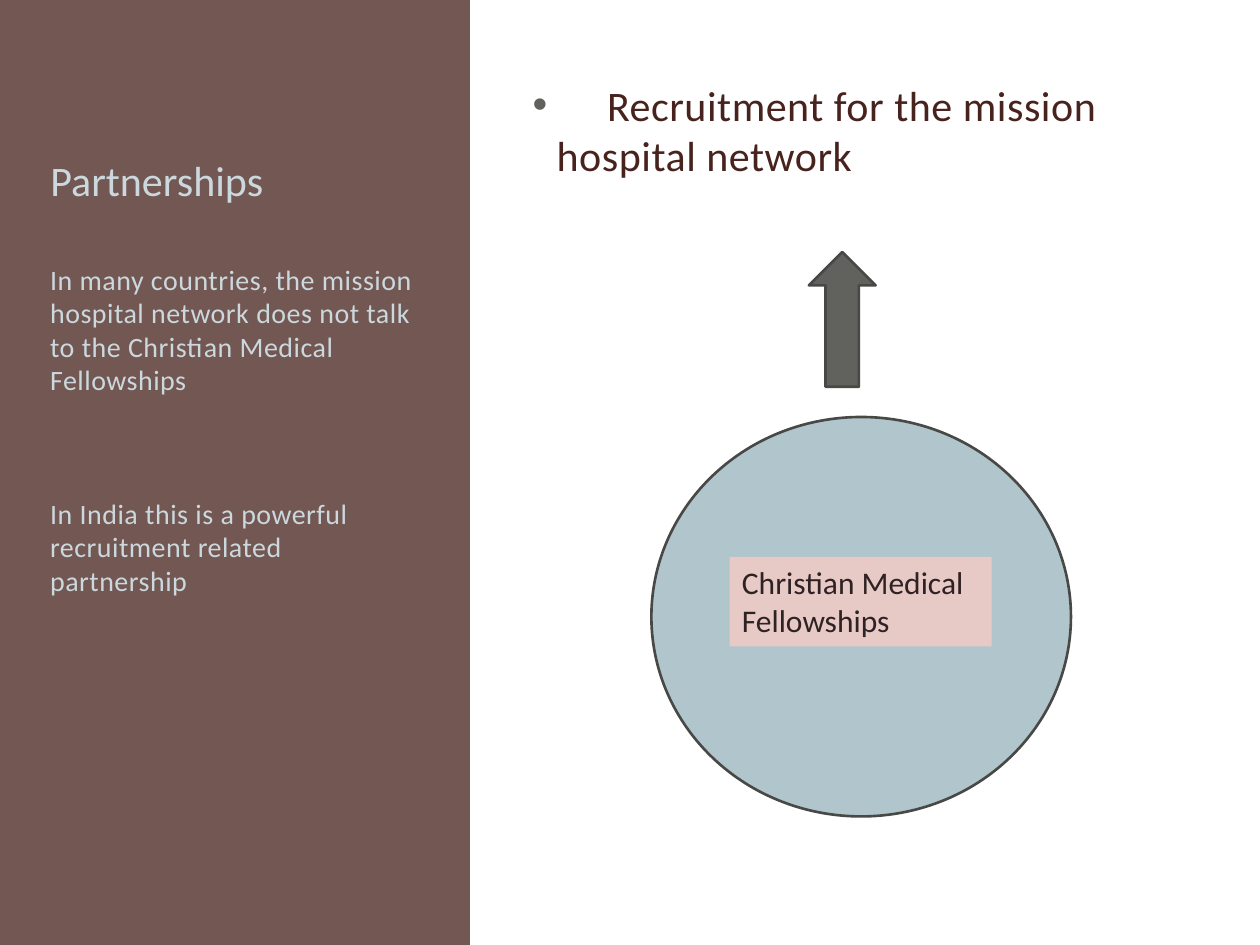
from dataclasses import dataclass
from lxml import etree
from pptx import Presentation, util as u
from pptx.dml.color import RGBColor
from pptx.enum import shapes, text
from pptx.oxml.ns import qn


@dataclass(frozen=True)
class Theme:
    face: str = "Calibri"
    brown: str = "48231E"
    pale: str = "CBD8DD"
    gray: str = "61625E"
    edge: str = "484946"
    blue: str = "B1C5CC"
    pink: str = "E7C9C5"
    ink: str = "2E2224"
    head: int = 24
    tag: int = 18
    note: int = 16


T = Theme()
KIND = shapes.MSO_SHAPE


def inner(box, left, top, wide, high):
    x, y, w, h = box
    return x + left * w, y + top * h, wide * w, high * h


def place(box):
    return [u.Inches(round(v, 2)) for v in box]


def sub(node, tag, **attrs):
    return etree.SubElement(node, qn(tag), attrs)


def style(para, size, color, track=None):
    font = para.font
    font.name, font.size = T.face, u.Pt(size)
    font.color.rgb = RGBColor.from_string(color)
    para.alignment = text.PP_ALIGN.LEFT
    if track:
        para._p.pPr.find(qn("a:defRPr")).set("spc", str(track))


def draw(slide, kind, box, fill, line=None):
    shape = slide.shapes.add_shape(kind, *place(box))
    shape.shadow.inherit = False
    shape.fill.solid()
    shape.fill.fore_color.rgb = RGBColor.from_string(fill)
    if line:
        shape.line.color.rgb = RGBColor.from_string(line)
        shape.line.width = u.Pt(1.5)
    else:
        shape.line.fill.background()
    return shape


def write(slide, box):
    frame = slide.shapes.add_textbox(*place(box)).text_frame
    frame.word_wrap = True
    return frame


def side(slide, box):
    panel = draw(slide, KIND.RECTANGLE, box, T.brown)
    color = panel.fill._xPr.find(qn("a:solidFill"))[0]
    sub(color, "a:alpha", val="76000")

    title = slide.shapes.title
    panel._element.addnext(title._element)
    title.left, title.top, title.width, title.height = place(
        inner(box, 0.08, 0.033, 0.83, 0.19))
    frame = title.text_frame
    frame.text = "Partnerships"
    frame.vertical_anchor = text.MSO_ANCHOR.BOTTOM
    style(frame.paragraphs[0], T.head, T.pale)

    notes = (
        "In many countries, the mission hospital network does not talk "
        "to the Christian Medical Fellowships",
        "In India this is a powerful recruitment related partnership",
    )
    frame = write(slide, inner(box, 0.08, 0.224, 0.83, 0.687))
    frame.margin_top = u.Inches(0.4)
    frame.text = "\n".join(notes)
    for para in frame.paragraphs:
        style(para, T.note, T.pale, 30)
    frame.paragraphs[1].space_before = u.Pt(57)


def goal(slide, box):
    frame = write(slide, box)
    frame.text = "\tRecruitment for the mission hospital network"
    para = frame.paragraphs[0]
    props = para._p.get_or_add_pPr()
    hang = u.Inches(0.19)
    props.set("marL", str(hang))
    props.set("indent", str(-hang))
    sub(sub(props, "a:buClr"), "a:srgbClr", val=T.gray)
    sub(props, "a:buFont", typeface="Arial")
    sub(props, "a:buChar", char="•")
    sub(sub(props, "a:tabLst"), "a:tab", pos=str(u.Inches(0.59)), algn="l")
    style(para, T.head, T.brown, 30)


def source(slide, box):
    draw(slide, KIND.FLOWCHART_CONNECTOR, box, T.blue, T.edge)
    tag = draw(slide, KIND.RECTANGLE,
               inner(box, 0.187, 0.35, 0.625, 0.224), T.pink)
    frame = tag.text_frame
    frame.word_wrap = True
    frame.vertical_anchor = text.MSO_ANCHOR.TOP
    frame.text = "Christian Medical Fellowships"
    style(frame.paragraphs[0], T.tag, T.ink)


def main():
    deck = Presentation()
    page = (0, 0, 10, 7.5)
    deck.slide_width, deck.slide_height = place(page)[2:]
    slide = deck.slides.add_slide(deck.slide_layouts[5])
    side(slide, inner(page, 0, 0, 0.373, 1))
    goal(slide, inner(page, 0.413, 0.077, 0.554, 0.832))
    source(slide, inner(page, 0.517, 0.441, 0.333, 0.423))
    draw(slide, KIND.UP_ARROW,
         inner(page, 0.642, 0.267, 0.053, 0.143), T.gray, T.edge)
    deck.save("out.pptx")


if __name__ == "__main__":
    main()
